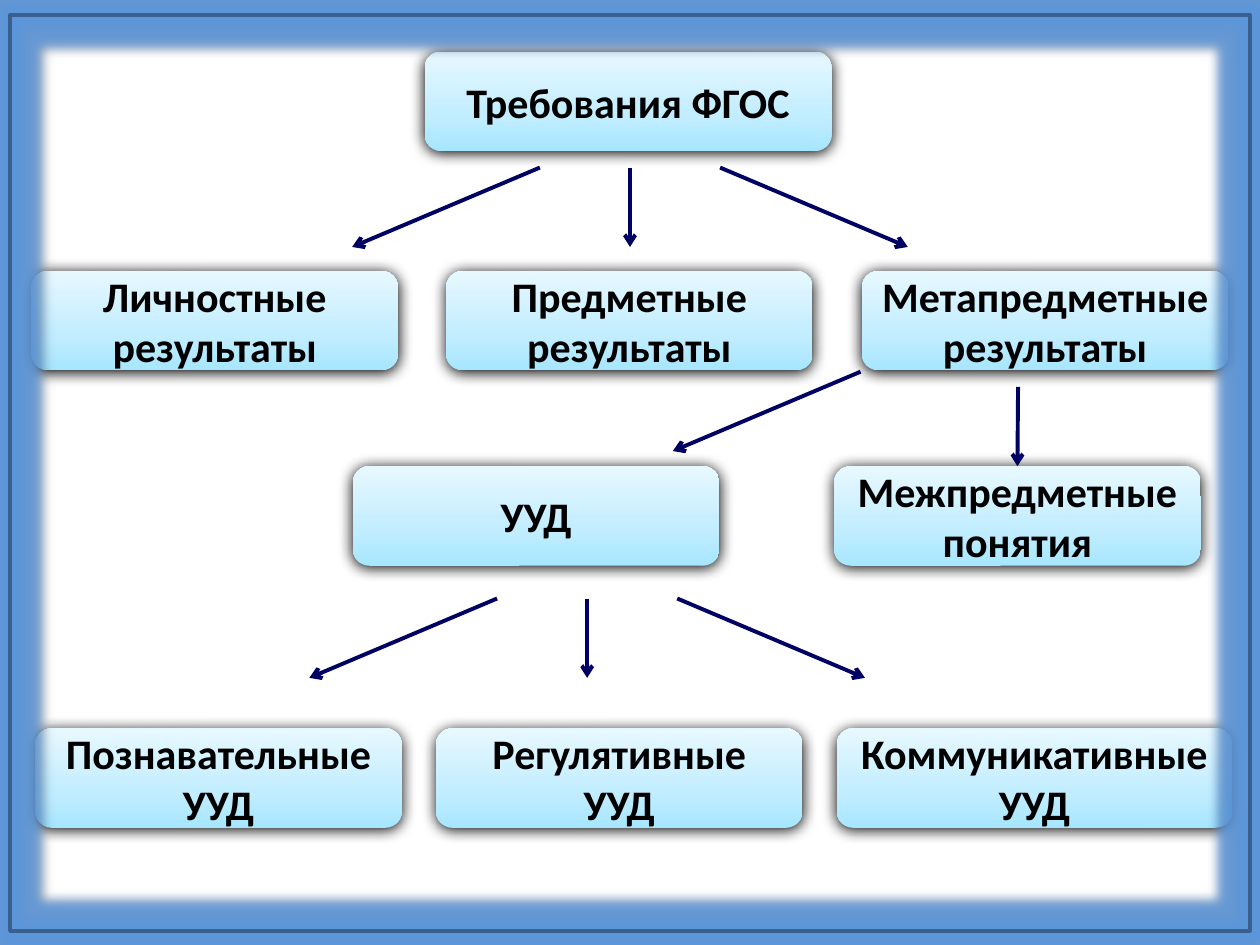
from typing import NamedTuple

from lxml import etree
from pptx import Presentation
from pptx.dml.color import RGBColor
from pptx.enum.shapes import MSO_CONNECTOR, MSO_SHAPE
from pptx.enum.text import MSO_ANCHOR, PP_ALIGN
from pptx.oxml.ns import qn
from pptx.util import Inches, Pt

ROUNDED = MSO_SHAPE.ROUNDED_RECTANGLE
RECTANGLE = MSO_SHAPE.RECTANGLE
STRAIGHT = MSO_CONNECTOR.STRAIGHT
MIDDLE = MSO_ANCHOR.MIDDLE
CENTER = PP_ALIGN.CENTER

TOP_SIDE = 0
BOX_WIDTH, BOX_HEIGHT = 2.91, 0.79
RESULTS_TOP, CONCEPTS_TOP, ACTIONS_TOP = 2.15, 3.7, 5.78
ARROW_RISE, ARROW_RUN, FAN_SPREAD = 0.63, 1.49, 0.715
GRADIENT = ((0, "A7E6FF"), (35, "C1EDFF"), (100, "E7F8FF"))
ARROW_COLOR, FRAME_COLOR, GLOW_COLOR = "000064", "3A5F8C", "5A96DC"


class Box(NamedTuple):
    text: str
    left: float
    top: float
    width: float = BOX_WIDTH


class Arrow(NamedTuple):
    x: float
    y: float
    run: float = 0


def rgb(color: str) -> RGBColor:
    return RGBColor.from_string(color)


def add_child(parent, tag: str, **attributes):
    return etree.SubElement(
        parent, qn(tag), {key: str(value) for key, value in attributes.items()})


def add_color(parent, color: str, opacity: int = 100) -> None:
    node = add_child(parent, "a:srgbClr", val=color)
    if opacity < 100:
        add_child(node, "a:alpha", val=opacity * 1000)


def add_shadow(effects, blur: float, distance: float, opacity: int) -> None:
    shadow = add_child(effects, "a:outerShdw", blurRad=Pt(blur), dist=Pt(distance),
                       dir=5400000, algn="ctr", rotWithShape=0)
    add_color(shadow, "000000", opacity)


def clear_effects(shape):
    shape.shadow.inherit = False
    return shape._element.spPr.find(qn("a:effectLst"))


def draw_box(slide, box: Box):
    shape = slide.shapes.add_shape(ROUNDED, Inches(box.left), Inches(box.top),
                                   Inches(box.width), Inches(BOX_HEIGHT))
    shape.fill.gradient()
    shape.fill.gradient_angle = 90
    stops = shape._element.spPr.find(qn("a:gradFill")).find(qn("a:gsLst"))
    for old_stop in list(stops):
        stops.remove(old_stop)
    for percent, color in GRADIENT:
        add_color(add_child(stops, "a:gs", pos=percent * 1000), color)
    shape.line.fill.background()
    add_shadow(clear_effects(shape), 8.5, 1, 100)

    frame = shape.text_frame
    frame.word_wrap = True
    frame.vertical_anchor = MIDDLE
    frame.text = box.text
    paragraph = frame.paragraphs[0]
    paragraph.alignment = CENTER
    font = paragraph.runs[0].font
    font.name, font.size, font.bold = "Calibri", Pt(24), True
    font.color.rgb = rgb("000000")
    return shape


def draw_arrow(slide, arrow: Arrow):
    connector = slide.shapes.add_connector(
        STRAIGHT, Inches(arrow.x), Inches(arrow.y),
        Inches(arrow.x + arrow.run), Inches(arrow.y + ARROW_RISE))
    connector.line.color.rgb = rgb(ARROW_COLOR)
    connector.line.width = Pt(2.25)
    add_child(connector.line._get_or_add_ln(), "a:tailEnd", type="arrow")
    add_child(connector._element.spPr, "a:effectLst")
    return connector


def draw_fan(slide, center: float, top: float) -> None:
    for direction in (0, 1, -1):
        draw_arrow(slide, Arrow(center + direction * FAN_SPREAD, top,
                                direction * ARROW_RUN))


def draw_frame(slide) -> None:
    border = slide.shapes.add_shape(RECTANGLE, Inches(0.08), Inches(0.12),
                                    Inches(9.84), Inches(7.27))
    border.fill.background()
    border.line.color.rgb = rgb(FRAME_COLOR)
    border.line.width = Pt(2)
    effects = clear_effects(border)
    add_color(add_child(effects, "a:glow", rad=Pt(11)), GLOW_COLOR, 85)
    add_shadow(effects, 5, 0, 40)


def main() -> None:
    presentation = Presentation()
    presentation.slide_width, presentation.slide_height = Inches(10), Inches(7.5)
    slide = presentation.slides.add_slide(presentation.slide_layouts[6])

    for box in (
        Box("Требования ФГОС", 3.37, 0.41, 3.23),
        Box("Личностные результаты", 0.25, RESULTS_TOP),
        Box("Предметные результаты", 3.54, RESULTS_TOP),
        Box("УУД", 2.8, CONCEPTS_TOP),
        Box("Метапредметные результаты", 6.84, RESULTS_TOP),
        Box("Познавательные УУД", 0.28, ACTIONS_TOP),
        Box("Регулятивные УУД", 3.46, ACTIONS_TOP),
        Box("Коммуникативные УУД", 6.64, ACTIONS_TOP, 3.14),
    ):
        draw_box(slide, box)
    concepts = draw_box(slide, Box("Межпредметные понятия", 6.62, CONCEPTS_TOP))

    draw_fan(slide, 5, 1.33)
    draw_arrow(slide, Arrow(8.08, 3.07)).end_connect(concepts, TOP_SIDE)
    draw_arrow(slide, Arrow(6.83, 2.95, -ARROW_RUN))
    draw_fan(slide, 4.66, 4.75)
    draw_frame(slide)

    presentation.save("out.pptx")


if __name__ == "__main__":
    main()
